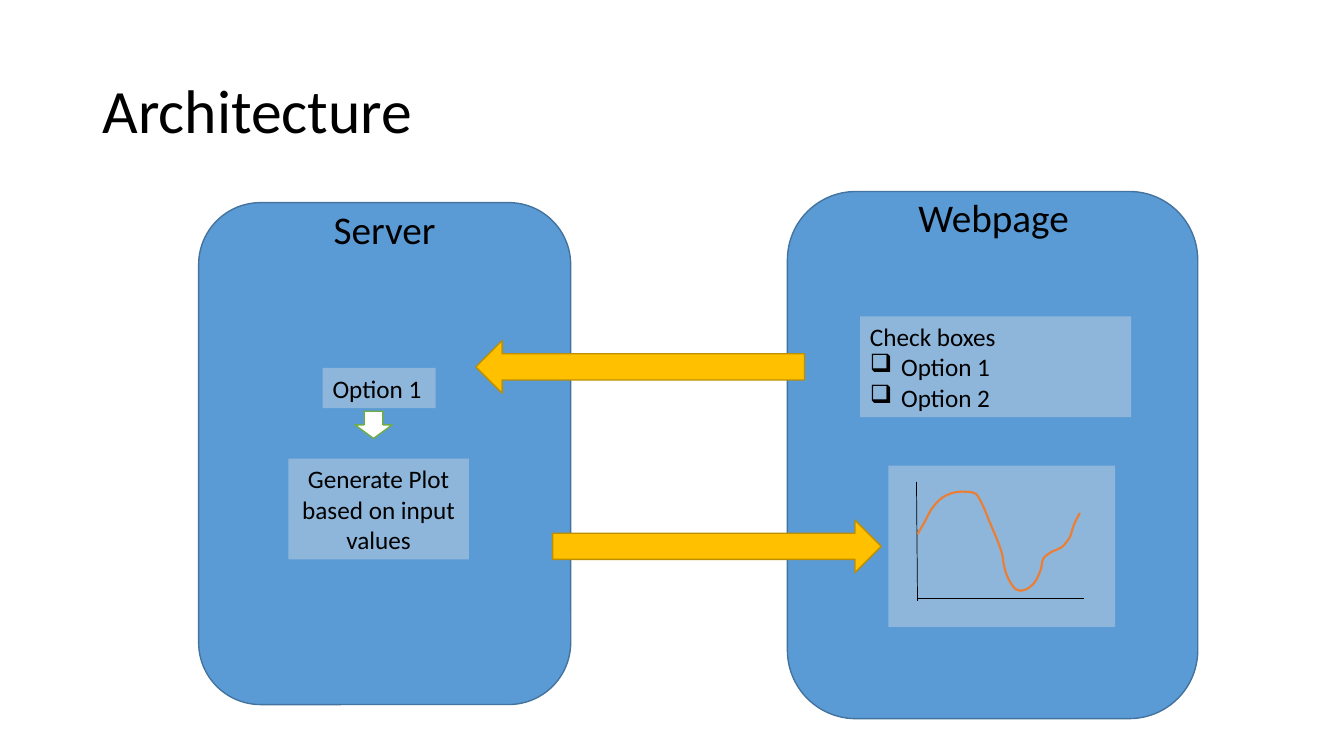
import pptx
import pptx.dml.color
import pptx.enum.shapes
import pptx.enum.text
import pptx.oxml
import pptx.oxml.ns
import pptx.util
from lxml import etree

EMU_PER_PX = 9144  # 100 px to the inch
FONT = "Calibri"
COLORS = {
    "text": "000000",
    "panel": "5B9BD5",
    "panel_edge": "43739E",
    "arrow": "FFC000",
    "arrow_edge": "BD8E00",
    "card": "D6DCE5",
    "step": "FFFFFF",
    "step_edge": "70AD47",
    "curve": "ED7D31",
}
CARD_OPACITY = 42
SHAPES = pptx.enum.shapes.MSO_SHAPE
ALIGN = pptx.enum.text.PP_ALIGN
ANCHOR = pptx.enum.text.MSO_ANCHOR
GROW = pptx.enum.text.MSO_AUTO_SIZE.SHAPE_TO_FIT_TEXT
qn = pptx.oxml.ns.qn

CURVE_KNOTS = [
    (910, 530), (917, 518), (924, 505), (933, 495), (942, 490), (950, 488),
    (959, 488), (968, 490), (975, 502), (980, 514), (985, 526), (990, 538),
    (994, 550), (996, 562), (1000, 574), (1008, 585), (1017, 585),
    (1026, 578), (1032, 566), (1035, 554), (1044, 547), (1053, 543),
    (1061, 533), (1065, 521), (1071, 509),
]


def px(length):
    return pptx.util.Emu(length * EMU_PER_PX)


def color(name):
    return pptx.dml.color.RGBColor.from_string(COLORS[name])


def write(frame, text, size=18, align=ALIGN.LEFT, anchor=ANCHOR.TOP,
          spacing=None, wrap=True, auto_size=GROW):
    """Fill a text frame; lines that start with ❑ become list items."""
    frame.word_wrap = wrap
    frame.auto_size = auto_size
    frame.vertical_anchor = anchor
    for index, line in enumerate(text.split("\n")):
        para = frame.paragraphs[0] if index == 0 else frame.add_paragraph()
        para.alignment = align
        if spacing:
            para.line_spacing = spacing
        if line.startswith("❑"):
            props = para._p.get_or_add_pPr()
            props.set("marL", str(px(31)))
            props.set("indent", str(-px(31)))
            etree.SubElement(props, qn("a:buChar")).set("char", "❑")
        span = para.add_run()
        span.text = line.removeprefix("❑")
        span.font.size = pptx.util.Pt(size)
        span.font.name = FONT
        span.font.color.rgb = color("text")


def round_off(shape):
    """Turn the straight segments of a freeform into smooth Bézier segments."""
    knots = [(int(point.get("x")), int(point.get("y")))
             for point in shape._element.iter(qn("a:pt"))]
    padded = [knots[0], *knots, knots[-1]]
    segments = list(shape._element.iter(qn("a:lnTo")))
    for segment, before, start, end, after in zip(
            segments, padded, padded[1:], padded[2:], padded[3:]):
        leave = [s + (e - b) // 6 for b, s, e in zip(before, start, end)]
        arrive = [e - (a - s) // 6 for s, e, a in zip(start, end, after)]
        bezier = etree.Element(qn("a:cubicBezTo"))
        for x, y in (leave, arrive, end):
            etree.SubElement(bezier, qn("a:pt"), x=str(x), y=str(y))
        segment.getparent().replace(segment, bezier)


class Diagram:
    def __init__(self, deck):
        self.page = deck.slides.add_slide(deck.slide_layouts[6])

    def text(self, left, top, width, height, text, **style):
        box = self.page.shapes.add_textbox(*map(px, (left, top, width, height)))
        write(box.text_frame, text, **style)

    def shape(self, kind, left, top, width, height, fill, edge, rotation=0):
        shape = self.page.shapes.add_shape(kind, *map(px, (left, top, width, height)))
        shape.shadow.inherit = False
        shape.fill.solid()
        shape.fill.fore_color.rgb = color(fill)
        if edge:
            shape.line.color.rgb = color(edge)
            shape.line.width = pptx.util.Pt(1)
        else:
            shape.line.fill.background()
        shape.rotation = rotation
        return shape

    def panel(self, left, top, width, height, heading, heading_left, heading_top):
        self.shape(SHAPES.ROUNDED_RECTANGLE, left, top, width, height,
                   "panel", "panel_edge")
        self.text(heading_left, heading_top, 295, 57, heading,
                  size=28, align=ALIGN.CENTER)

    def card(self, left, top, width, height, text="", **style):
        card = self.shape(SHAPES.RECTANGLE, left, top, width, height, "card", None)
        tint = card._element.spPr.find(".//" + qn("a:srgbClr"))
        etree.SubElement(tint, qn("a:alpha")).set("val", str(CARD_OPACITY * 1000))
        if text:
            write(card.text_frame, text, **style)

    def line(self, *ends):
        line = self.page.shapes.add_connector(
            pptx.enum.shapes.MSO_CONNECTOR.STRAIGHT, *map(px, ends))
        line.line.color.rgb = color("text")
        line.line.width = pptx.util.Pt(0.5)
        etree.SubElement(line._element.spPr, qn("a:effectLst"))

    def curve(self, knots):
        builder = self.page.shapes.build_freeform(*knots[0], scale=EMU_PER_PX)
        builder = self.page.shapes.build_freeform(*map(px, knots[0]))
        builder.add_line_segments([tuple(map(px, knot)) for knot in knots[1:]],
                                  close=False)
        curve = builder.convert_to_shape()
        round_off(curve)
        curve.shadow.inherit = False
        curve.fill.background()
        curve.line.color.rgb = color("curve")
        curve.line.width = pptx.util.Pt(1.5)


def main():
    deck = pptx.Presentation()
    deck.slide_width, deck.slide_height = px(1333), px(750)
    diagram = Diagram(deck)

    # Title
    diagram.text(92, 40, 1150, 145, "Architecture", size=44,
                 anchor=ANCHOR.MIDDLE, spacing=0.9, auto_size=None)

    # Two sides
    diagram.panel(781, 190, 407, 523, "Webpage", 838, 187)
    diagram.panel(197, 201, 369, 498, "Server", 234, 199)

    # Request and response
    for left, top, rotation in ((472, 338, 0), (548, 516, 180)):
        diagram.shape(SHAPES.LEFT_ARROW, left, top, 326, 52,
                      "arrow", "arrow_edge", rotation)

    # Webpage input and server steps
    diagram.card(853, 314, 269, 100, "Check boxes\n❑Option 1\n❑Option 2")
    diagram.card(320, 365, 112, 40, "Option 1", wrap=False)
    diagram.shape(SHAPES.DOWN_ARROW, 352, 408, 37, 27, "step", "step_edge")
    diagram.card(286, 455, 179, 100, "Generate Plot based on input values",
                 align=ALIGN.CENTER)

    # Plot sketch
    diagram.card(881, 462, 225, 160)
    diagram.line(909, 478, 910, 596)
    diagram.line(910, 594, 1075, 594)
    diagram.curve(CURVE_KNOTS)

    deck.save("out.pptx")


if __name__ == "__main__":
    main()
